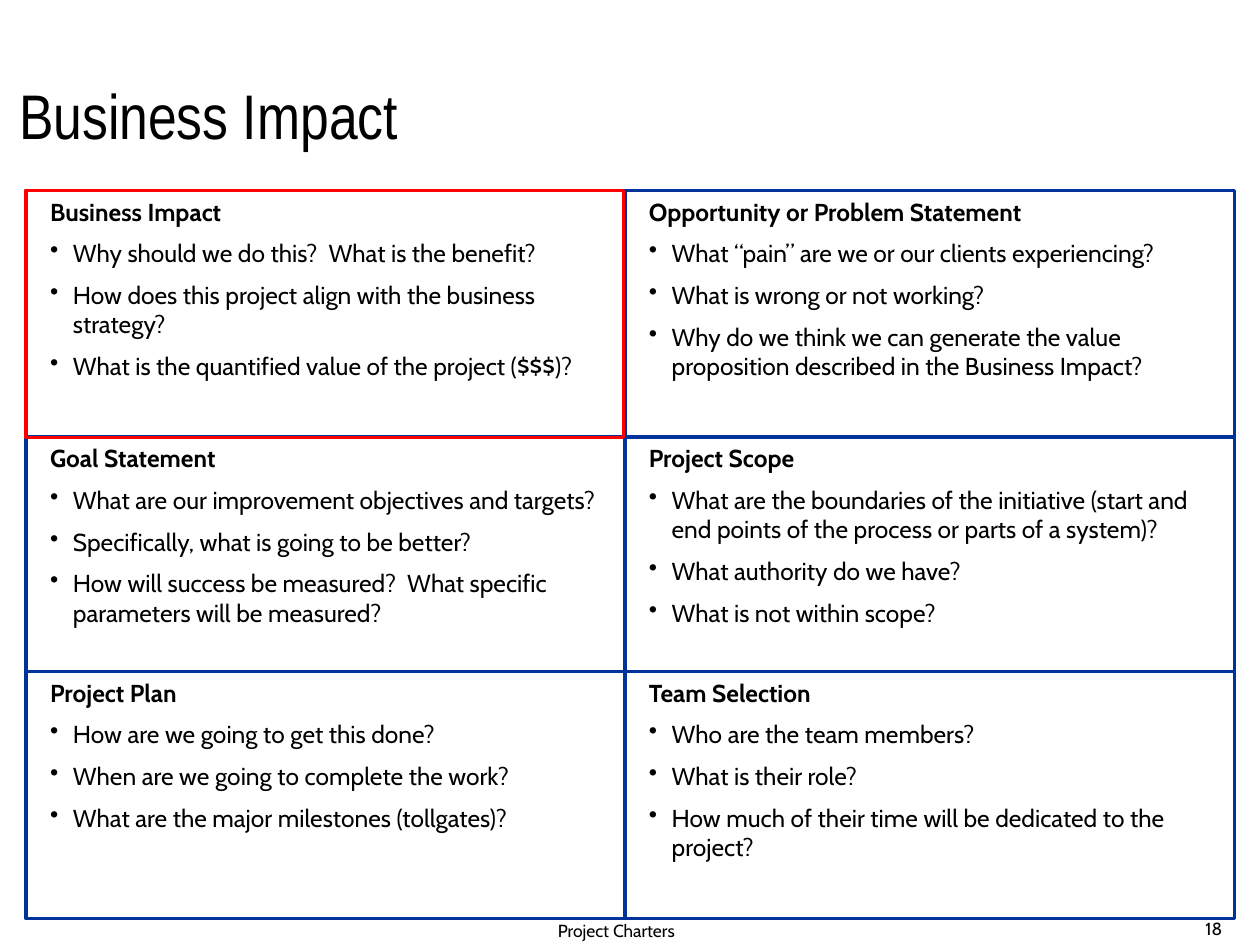
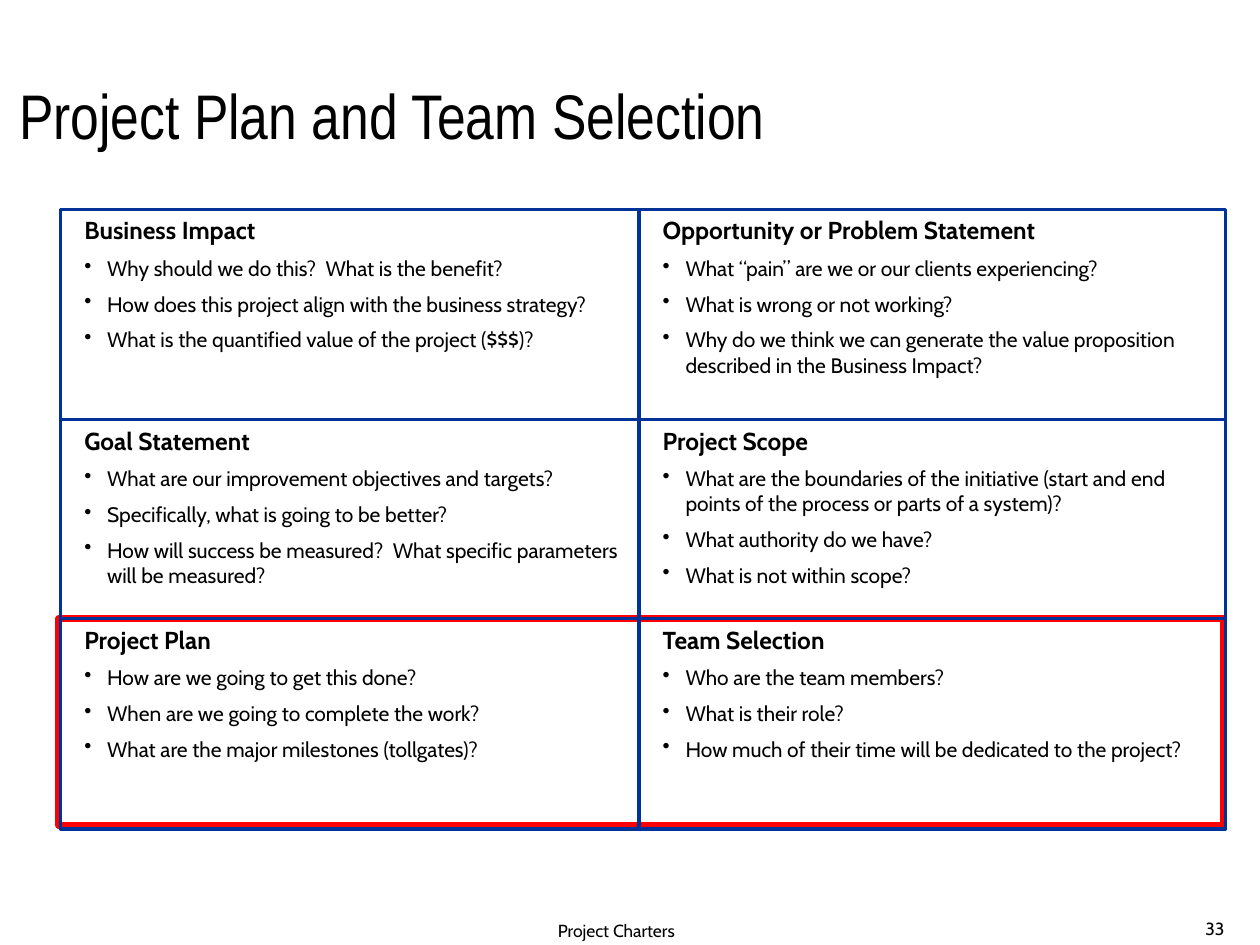
from lxml import etree
from pptx import Presentation
from pptx.dml.color import RGBColor
from pptx.enum.shapes import MSO_CONNECTOR, MSO_SHAPE
from pptx.enum.text import MSO_ANCHOR, MSO_AUTO_SIZE, PP_ALIGN
from pptx.oxml.ns import qn
from pptx.util import Cm, Pt

RECT = MSO_SHAPE.RECTANGLE
LINE = MSO_CONNECTOR.STRAIGHT
TOP, BOTTOM = MSO_ANCHOR.TOP, MSO_ANCHOR.BOTTOM
LEFT, CENTER = PP_ALIGN.LEFT, PP_ALIGN.CENTER
FIXED = MSO_AUTO_SIZE.NONE

BLACK, WHITE, BLUE, RED = "000000", "FFFFFF", "003399", "FF0000"
HEAD_FONT, BODY_FONT = "Arial Narrow", "Cabin"
HEAD_SIZE, FOOT_SIZE, TOPIC_SIZE = 36, 10, 14
PAD, HANG = 0.23, 0.46

FOOTER = "Project Charters"

# Rows of the charter, each a left and a right topic
CHARTER = [
    [
        ("Business Impact", [
            "Why should we do this?  What is the benefit?",
            "How does this project align with the business strategy?",
            "What is the quantified value of the project ($$$)?",
        ]),
        ("Opportunity or Problem Statement", [
            "What “pain” are we or our clients experiencing?",
            "What is wrong or not working?",
            "Why do we think we can generate the value proposition "
            "described in the Business Impact?",
        ]),
    ],
    [
        ("Goal Statement", [
            "What are our improvement objectives and targets?",
            "Specifically, what is going to be better?",
            "How will success be measured?  What specific parameters "
            "will be measured?",
        ]),
        ("Project Scope", [
            "What are the boundaries of the initiative (start and end "
            "points of the process or parts of a system)?",
            "What authority do we have?",
            "What is not within scope?",
        ]),
    ],
    [
        ("Project Plan", [
            "How are we going to get this done?",
            "When are we going to complete the work?",
            "What are the major milestones (tollgates)?",
        ]),
        ("Team Selection", [
            "Who are the team members?",
            "What is their role?",
            "How much of their time will be dedicated to the project?",
        ]),
    ],
]

# cols and rows are the grid edges in cm; mark is the red frame
SLIDES = [
    dict(title="Business Impact", page="18", size=14, fill=WHITE,
         cols=(0.53, 12.6, 24.89), rows=(3.84, 8.81, 13.54, 18.52),
         mark=(0.53, 3.84, 12.04, 4.98), weight=2, above=True),
    dict(title="Project Plan and Team Selection", page="33", size=12, fill=None,
         cols=(1.22, 12.88, 24.71), rows=(4.22, 8.46, 12.47, 16.71),
         mark=(1.19, 12.47, 23.47, 4.17), weight=4, above=False),
]


def color(code):
    return RGBColor.from_string(code)


def place(box):
    return [Cm(v) for v in box]


def write(para, text, size, font=BODY_FONT, bold=False):
    run = para.add_run()
    run.text = text
    run.font.size = Pt(size)
    run.font.name = font
    run.font.bold = bold
    run.font.color.rgb = color(BLACK)


def add_text(shapes, box, anchor=TOP):
    """Add an empty wrapping text box and return its frame."""
    frame = shapes.add_textbox(*place(box)).text_frame
    frame.word_wrap = True
    frame.vertical_anchor = anchor
    return frame


def add_frame(shapes, box, line, weight, fill=None):
    rect = shapes.add_shape(RECT, *place(box))
    rect.shadow.inherit = False
    if fill:
        rect.fill.solid()
        rect.fill.fore_color.rgb = color(fill)
    else:
        rect.fill.background()
    rect.line.color.rgb = color(line)
    rect.line.width = Pt(weight)


def add_rule(shapes, *ends):
    rule = shapes.add_connector(LINE, *place(ends))
    rule.line.color.rgb = color(BLUE)
    rule.line.width = Pt(2)
    etree.SubElement(rule._element.spPr, qn("a:effectLst"))


def indent(para, bullet):
    """Hang the first line, with a black dot if bullet is set."""
    props = para._p.get_or_add_pPr()
    props.set("marL", str(Cm(HANG)))
    props.set("indent", str(-Cm(HANG)))
    if bullet:
        tint = etree.SubElement(props, qn("a:buClr"))
        etree.SubElement(tint, qn("a:srgbClr"), val=BLACK)
        etree.SubElement(props, qn("a:buChar"), char="•")


def add_topic(shapes, box, topic, asks, size):
    frame = add_text(shapes, box)
    head = frame.paragraphs[0]
    indent(head, False)
    write(head, topic, TOPIC_SIZE, bold=True)
    for ask in asks:
        para = frame.add_paragraph()
        para.space_before = Pt(size / 2)
        indent(para, True)
        write(para, ask, size)


def add_grid(shapes, cols, rows, size, fill):
    x, mid, right = cols
    y, end = rows[0], rows[-1]
    add_frame(shapes, (x, y, right - x, end - y), BLUE, 2, fill)
    add_rule(shapes, mid, end, mid, y)
    for edge in rows[1:-1]:
        add_rule(shapes, x, edge, right, edge)
    width = mid - x - PAD
    for r, pair in enumerate(CHARTER):
        for c, (topic, asks) in enumerate(pair):
            trim = PAD if c or r == len(CHARTER) - 1 else 0
            box = (cols[c] + PAD, rows[r], width, rows[r + 1] - rows[r] - trim)
            add_topic(shapes, box, topic, asks, size)


def add_base(deck, title, page):
    """Add a slide with its title, footer and page number."""
    slide = deck.slides.add_slide(deck.slide_layouts[5])
    head = slide.shapes.title
    head.left, head.top, head.width, head.height = place((0.13, 0.03, 21.11, 3.18))
    frame = head.text_frame
    frame.auto_size = FIXED
    frame.word_wrap = True
    frame.vertical_anchor = BOTTOM
    para = frame.paragraphs[0]
    para.alignment = LEFT
    para.line_spacing = 0.9
    write(para, title, HEAD_SIZE, HEAD_FONT)
    number = add_text(slide.shapes, (24.05, 18.42, 1.09, 0.64), BOTTOM)
    write(number.paragraphs[0], page, FOOT_SIZE)
    foot = add_text(slide.shapes, (3.94, 18.42, 16.97, 0.64)).paragraphs[0]
    foot.alignment = CENTER
    write(foot, FOOTER, FOOT_SIZE)
    return slide


def main():
    deck = Presentation()
    deck.slide_width, deck.slide_height = Cm(25.4), Cm(19.05)
    for item in SLIDES:
        shapes = add_base(deck, item["title"], item["page"]).shapes
        mark = (shapes, item["mark"], RED, item["weight"])
        if not item["above"]:
            add_frame(*mark)
        group = shapes if item["above"] else shapes.add_group_shape().shapes
        add_grid(group, item["cols"], item["rows"], item["size"], item["fill"])
        if item["above"]:
            add_frame(*mark)
    deck.save("out.pptx")


if __name__ == "__main__":
    main()
